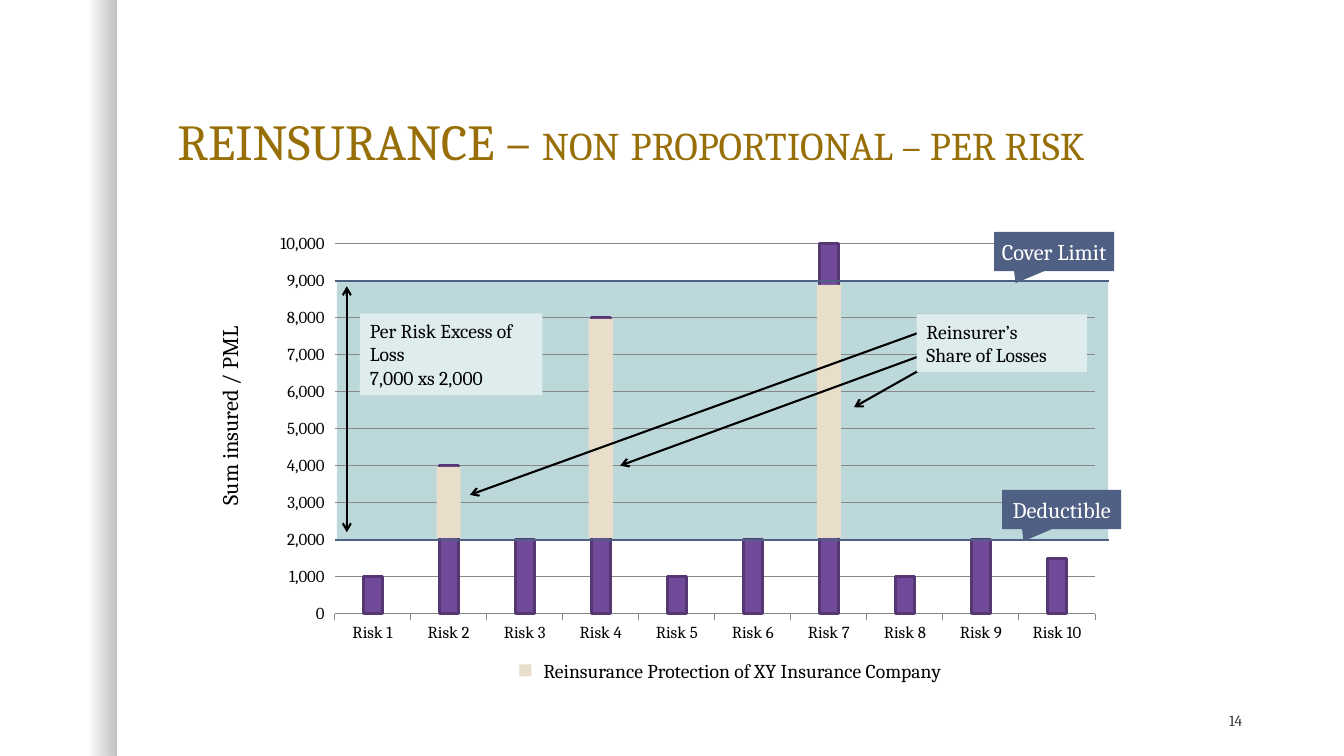
from lxml.etree import SubElement
from pptx import Presentation
from pptx.chart.data import CategoryChartData
from pptx.dml.color import RGBColor
from pptx.enum.chart import XL_CHART_TYPE as ChartType, XL_TICK_MARK as Tick
from pptx.enum.shapes import MSO_CONNECTOR as Connector, MSO_SHAPE as Shape
from pptx.enum.text import MSO_ANCHOR as Anchor, MSO_AUTO_SIZE as AutoSize, PP_ALIGN as Align
from pptx.oxml import parse_xml
from pptx.oxml.ns import nsdecls, qn
from pptx.util import Inches, Pt

WIDTH, HEIGHT = 13.33, 7.5
FONT = "Cambria"
BLACK = RGBColor(0x00, 0x00, 0x00)
WHITE = RGBColor(0xFF, 0xFF, 0xFF)
INK = RGBColor(0x30, 0x30, 0x30)
GOLD = RGBColor(0x98, 0x6F, 0x07)
TEAL = RGBColor(0xBC, 0xD8, 0xDB)
PALE_TEAL = RGBColor(0xDE, 0xEC, 0xED)
SAND = RGBColor(0xE8, 0xDE, 0xC9)
NAVY = RGBColor(0x50, 0x60, 0x84)
PURPLE = RGBColor(0x71, 0x4A, 0x9C)
DARK_PURPLE = RGBColor(0x54, 0x37, 0x73)
GREY = RGBColor(0x87, 0x87, 0x87)

LOSSES = [1000, 4000, 2000, 8000, 1000, 2000, 10000, 1000, 2000, 1500]
MAX_LOSS = 10000
COVER_LIMIT, DEDUCTIBLE = 9000, 2000
CHART_BOX = (2.02, 2.1, 9.21, 4.69)
PLOT_SHARES = (0.141, 0.068, 0.819, 0.783)
PLOT_LEFT = CHART_BOX[0] + PLOT_SHARES[0] * CHART_BOX[2]
PLOT_TOP = CHART_BOX[1] + PLOT_SHARES[1] * CHART_BOX[3]
PLOT_WIDTH = PLOT_SHARES[2] * CHART_BOX[2]
PLOT_HEIGHT = PLOT_SHARES[3] * CHART_BOX[3]


def loss_y(loss):
    """Height on the slide of a value on the loss axis."""
    return PLOT_TOP + PLOT_HEIGHT * (1 - loss / MAX_LOSS)


def inches(box):
    return [Inches(length) for length in box]


def write(shape, *lines, size=14, color=BLACK, align=Align.LEFT, anchor=Anchor.TOP,
          wrap=True, grow=False, margin=None, spacing=None):
    """Each line is a string, or a list of (text, size) spans."""
    frame = shape.text_frame
    frame.word_wrap = wrap
    frame.auto_size = AutoSize.SHAPE_TO_FIT_TEXT if grow else AutoSize.NONE
    frame.vertical_anchor = anchor
    if margin is not None:
        frame.margin_left = frame.margin_right = Inches(margin)
        frame.margin_top = frame.margin_bottom = Inches(margin)
    for index, line in enumerate(lines):
        para = frame.add_paragraph() if index else frame.paragraphs[0]
        para.alignment = align
        if spacing:
            para.line_spacing = spacing
        for text, points in [(line, size)] if isinstance(line, str) else line:
            span = para.add_run()
            span.text = text
            span.font.name = FONT
            span.font.size = Pt(points)
            span.font.color.rgb = color


def add_label(page, box, *lines, **style):
    label = page.shapes.add_textbox(*inches(box))
    write(label, *lines, **style)
    return label


def add_block(page, box, color, kind=Shape.RECTANGLE):
    block = page.shapes.add_shape(kind, *inches(box))
    block.shadow.inherit = False
    block.fill.solid()
    block.fill.fore_color.rgb = color
    block.line.fill.background()
    return block


def add_line(page, start, end, color=BLACK, arrows=()):
    """Arrows may hold headEnd (at start) and tailEnd (at end)."""
    line = page.shapes.add_connector(Connector.STRAIGHT, *inches(start + end))
    line.line.color.rgb = color
    line.line.width = Pt(1.5)
    outline = line.line._get_or_add_ln()
    for arrow in arrows:
        SubElement(outline, qn(f"a:{arrow}"), type="arrow")
    SubElement(line._element.spPr, qn("a:effectLst"))


def add_side_shade(page, box):
    shade = add_block(page, box, WHITE)
    shade.fill.gradient()
    shade.fill.gradient_angle = 0
    for stop, position, alpha in zip(shade.fill.gradient_stops, (0.75, 1), (0, 25000)):
        stop.position = position
        stop.color.rgb = BLACK
    for color, alpha in zip(shade._element.spPr.iter(qn("a:srgbClr")), (0, 25000)):
        SubElement(color, qn("a:alpha"), val=str(alpha))


def add_loss_chart(page, box):
    data = CategoryChartData(number_format="#,##0")
    data.categories = [f"Risk {number}" for number in range(1, len(LOSSES) + 1)]
    data.add_series("Series 1", LOSSES)
    chart = page.shapes.add_chart(ChartType.COLUMN_CLUSTERED, *inches(box), data).chart
    chart.has_legend = chart.has_title = False
    chart.font.name = FONT
    chart.font.size = Pt(18)
    chart.font.color.rgb = INK

    plot = chart.plots[0]
    plot.gap_width, plot.overlap, plot.vary_by_categories = 300, -100, False
    bars = plot.series[0].format
    bars.fill.solid()
    bars.fill.fore_color.rgb = PURPLE
    bars.line.color.rgb = DARK_PURPLE
    bars.line.width = Pt(2)

    for axis in (chart.category_axis, chart.value_axis):
        axis.major_tick_mark, axis.minor_tick_mark = Tick.OUTSIDE, Tick.NONE
        axis.tick_labels.font.size = Pt(12)
        axis.tick_labels.font.name = FONT
        axis.tick_labels.font.color.rgb = BLACK
        axis.format.line.color.rgb = GREY
    scale = chart.value_axis
    scale.minimum_scale, scale.maximum_scale, scale.major_unit = 0, MAX_LOSS, 1000
    scale.format.line.fill.background()
    scale.major_gridlines.format.line.color.rgb = GREY
    scale.tick_labels.number_format = "#,##0"
    scale.tick_labels.number_format_is_linked = False

    area = chart._chartSpace.chart.plotArea
    for layout in area.findall(qn("c:layout")):
        area.remove(layout)
    sides = "".join(f'<c:{side} val="{share}"/>' for side, share in zip("xywh", PLOT_SHARES))
    area.insert(0, parse_xml(
        f'<c:layout {nsdecls("c")}><c:manualLayout><c:layoutTarget val="inner"/>'
        f'<c:xMode val="edge"/><c:yMode val="edge"/>{sides}</c:manualLayout></c:layout>'))


def add_reinsured_parts(page):
    """Cover the part of each large loss between the deductible and the limit."""
    step, bar_width = PLOT_WIDTH / len(LOSSES), 0.24
    bottom = loss_y(DEDUCTIBLE) - 0.02
    for index, loss in enumerate(LOSSES):
        if loss > DEDUCTIBLE:
            top = loss_y(loss) + 0.01 if loss < COVER_LIMIT else loss_y(COVER_LIMIT) + 0.04
            left = PLOT_LEFT + (index + 0.5) * step - bar_width / 2
            add_block(page, (left, top, bar_width, bottom - top), SAND)


def add_callout(page, box, text):
    callout = add_block(page, box, NAVY, Shape.RECTANGULAR_CALLOUT)
    callout.adjustments[0], callout.adjustments[1] = -0.321, 0.805
    write(callout, text, size=16, color=WHITE, align=Align.CENTER,
          anchor=Anchor.MIDDLE, wrap=False, margin=0.08)


def add_cover_notes(page):
    add_line(page, (3.44, 2.84), (3.44, 5.28), arrows=("headEnd", "tailEnd"))
    write(add_block(page, (3.57, 3.11, 1.81, 0.81), PALE_TEAL),
          "Per Risk Excess of Loss", "7,000 xs 2,000", grow=True)
    add_reinsured_parts(page)
    for start, end in (((9.17, 3.28), (4.66, 4.91)),
                       ((9.21, 3.5), (6.15, 4.62)),
                       ((9.23, 3.61), (8.47, 4.04))):
        add_line(page, start, end, arrows=("tailEnd",))
    write(add_block(page, (9.09, 3.12, 1.69, 0.57), PALE_TEAL),
          "Reinsurer’s", "Share of Losses", grow=True)
    for loss in (DEDUCTIBLE, COVER_LIMIT):
        add_line(page, (PLOT_LEFT, loss_y(loss)), (11, loss_y(loss)), NAVY)
    add_callout(page, (9.94, 4.86, 1.18, 0.39), "Deductible")
    add_callout(page, (9.86, 2.3, 1.19, 0.39), "Cover Limit")


def add_legend(page, left, top):
    add_label(page, (left + 0.14, top, 5.5, 0.34),
              "Reinsurance Protection of XY Insurance Company", grow=True)
    add_block(page, (left, top + 0.1, 0.12, 0.12), SAND)


def build_risk_slide(page):
    add_side_shade(page, (0, 0, 1.16, HEIGHT))
    band_top = loss_y(COVER_LIMIT)
    add_block(page, (3.34, band_top, 7.65, loss_y(DEDUCTIBLE) - band_top), TEAL)
    add_loss_chart(page, CHART_BOX)
    add_label(page, (11.25, 7, 1.17, 0.3), "14", size=11, color=INK,
              align=Align.RIGHT, anchor=Anchor.MIDDLE)
    axis_title = add_label(page, (1.22, 3.87, 2.11, 0.37), "Sum insured / PML",
                           size=16, wrap=False, grow=True)
    axis_title.rotation = 270
    add_legend(page, 5.15, 6.49)
    add_cover_notes(page)
    add_label(page, (1.66, 0.42, 10.75, 1.33),
              [("REINSURANCE – ", 36), ("NON", 28), (" ", 36), ("PROPORTIONAL – PER RISK", 28)],
              color=GOLD, anchor=Anchor.BOTTOM, spacing=0.9)


def main():
    deck = Presentation()
    deck.slide_width, deck.slide_height = Inches(WIDTH), Inches(HEIGHT)
    build_risk_slide(deck.slides.add_slide(deck.slide_layouts[6]))
    deck.save("out.pptx")


if __name__ == "__main__":
    main()
